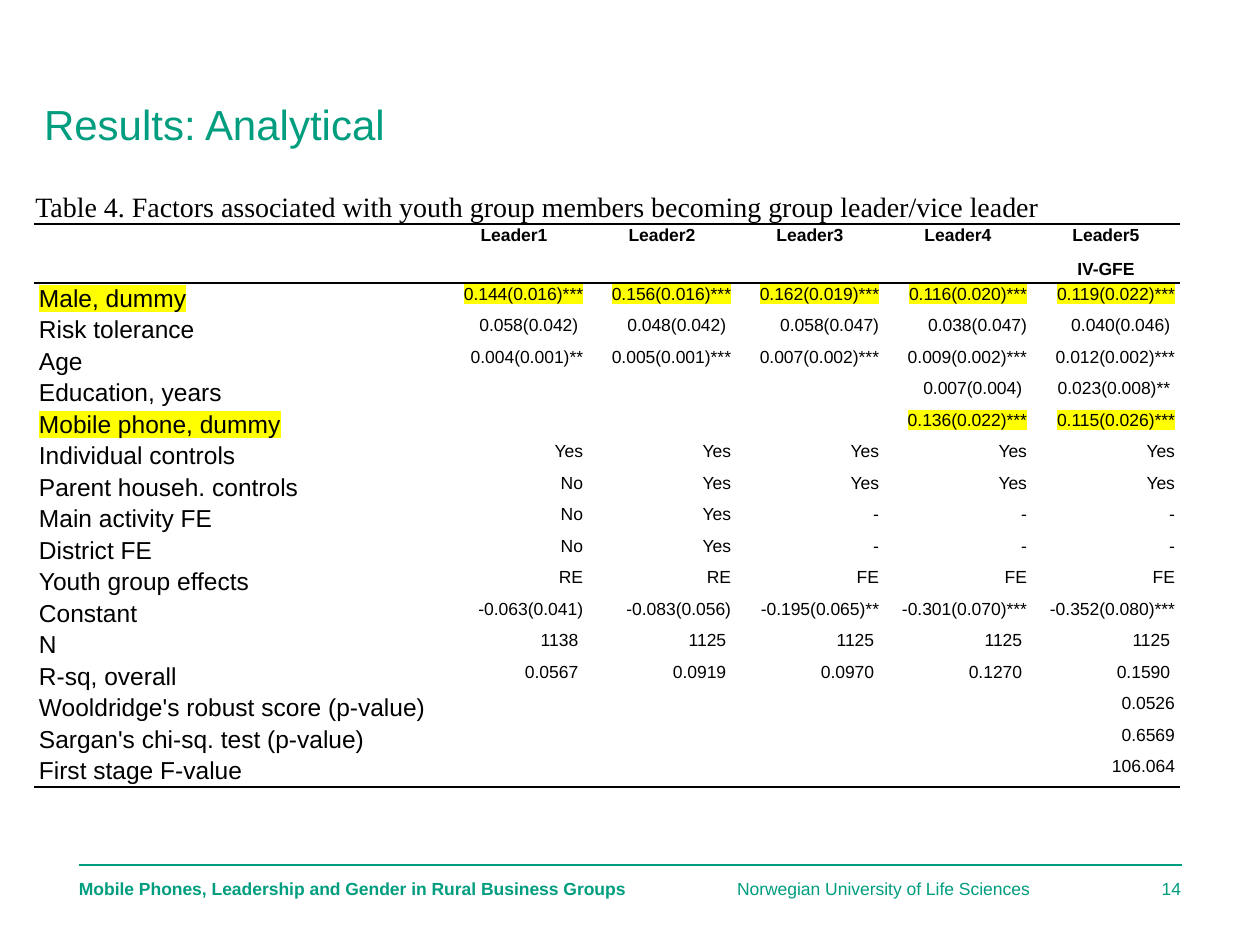
import pptx
import pptx.dml.color
import pptx.enum.shapes
import pptx.enum.text
import pptx.oxml
import pptx.oxml.ns
import pptx.util
import lxml.etree

ALIGN = pptx.enum.text.PP_ALIGN
ANCHOR = pptx.enum.text.MSO_ANCHOR
PX = 914400 // 126  # EMU in one pixel


class Theme:
    green = "009D7F"
    black = "000000"
    white = "FFFFFF"
    yellow = "FFFF00"
    sans = "Arial"
    serif = "Times New Roman"
    title = 24
    caption = 16
    label = 14
    small = 10
    rule = 1


def add_child(parent, tag, **attributes):
    child = lxml.etree.SubElement(parent, pptx.oxml.ns.qn(tag))
    for name, value in attributes.items():
        child.set(name, str(value))
    return child


def write(frame, text, size=Theme.small, color=Theme.black, font=Theme.sans, bold=False,
          align=ALIGN.LEFT, highlight=None, line_spacing=None, space_after=None):
    """Write each line of text as a paragraph of the frame."""
    for index, line in enumerate(text.split("\n")):
        para = frame.paragraphs[0] if index == 0 else frame.add_paragraph()
        para.alignment = align
        para.line_spacing = line_spacing
        if space_after:
            para.space_after = pptx.util.Pt(space_after)
        if not line:
            add_child(para._p, "a:endParaRPr", sz=size * 100)
            continue
        span = para.add_run()
        span.text = line
        span.font.size = pptx.util.Pt(size)
        span.font.bold = bold
        span.font.color.rgb = pptx.dml.color.RGBColor.from_string(color)
        if highlight:
            mark = add_child(span._r.get_or_add_rPr(), "a:highlight")
            add_child(mark, "a:srgbClr", val=highlight)
        span.font.name = font


deck = pptx.Presentation()
deck.slide_width = 1260 * PX
deck.slide_height = 945 * PX
page = deck.slides.add_slide(deck.slide_layouts[5])

# Footer rule
rule = page.shapes.add_connector(pptx.enum.shapes.MSO_CONNECTOR.STRAIGHT,
                                 79 * PX, 865 * PX, 1182 * PX, 865 * PX)
rule.line.color.rgb = pptx.dml.color.RGBColor.from_string(Theme.green)
rule.line.width = pptx.util.Pt(Theme.rule)
add_child(rule._element.spPr, "a:effectLst")

# Title
title = page.shapes.title
title.left, title.top, title.width, title.height = 44 * PX, 98 * PX, 940 * PX, 51 * PX
frame = title.text_frame
frame.margin_left = frame.margin_right = frame.margin_top = frame.margin_bottom = 0
frame.vertical_anchor = ANCHOR.BOTTOM
frame.auto_size = pptx.enum.text.MSO_AUTO_SIZE.SHAPE_TO_FIT_TEXT
write(frame, "Results: Analytical", size=Theme.title, color=Theme.green)

# Regression table
HEADER = ["", "Leader1", "Leader2", "Leader3", "Leader4", "Leader5\nIV-GFE"]
ROWS = [
    ["Male, dummy", "0.144(0.016)***", "0.156(0.016)***", "0.162(0.019)***",
     "0.116(0.020)***", "0.119(0.022)***"],
    ["Risk tolerance", "0.058(0.042) ", "0.048(0.042) ", "0.058(0.047)",
     "0.038(0.047)", "0.040(0.046) "],
    ["Age", "0.004(0.001)**", "0.005(0.001)***", "0.007(0.002)***",
     "0.009(0.002)***", "0.012(0.002)***"],
    ["Education, years", "", "", "", "0.007(0.004) ", "0.023(0.008)** "],
    ["Mobile phone, dummy", "", "", "", "0.136(0.022)***", "0.115(0.026)***"],
    ["Individual controls", "Yes", "Yes", "Yes", "Yes", "Yes"],
    ["Parent househ. controls", "No", "Yes", "Yes", "Yes", "Yes"],
    ["Main activity FE", "No", "Yes", "-", "-", "-"],
    ["District FE", "No", "Yes", "-", "-", "-"],
    ["Youth group effects", "RE", "RE", "FE", "FE", "FE"],
    ["Constant", "-0.063(0.041)", "-0.083(0.056)", "-0.195(0.065)**",
     "-0.301(0.070)***", "-0.352(0.080)***"],
    ["N", "1138 ", "1125 ", "1125 ", "1125 ", "1125 "],
    ["R-sq, overall", "0.0567 ", "0.0919 ", "0.0970 ", "0.1270 ", "0.1590 "],
    ["Wooldridge's robust score (p-value)", "", "", "", "", "0.0526"],
    ["Sargan's chi-sq. test (p-value)", "", "", "", "", "0.6569"],
    ["First stage F-value", "", "", "", "", "106.064"],
]
HIGHLIGHTED = {"Male, dummy", "Mobile phone, dummy"}
NO_STYLE = "{2D5ABB26-0587-4C30-8999-92F81FD0307C}"
header_height, body_height = 58 * PX, 478 * PX
label_width, value_width = 406 * PX, 148 * PX

grid = page.shapes.add_table(len(ROWS) + 1, len(HEADER), 34 * PX, 224 * PX,
                             label_width + 5 * value_width,
                             header_height + body_height).table
grid.first_row = grid.horz_banding = False
grid._tbl.tblPr.find(pptx.oxml.ns.qn("a:tableStyleId")).text = NO_STYLE
for index, column in enumerate(grid.columns):
    column.width = value_width if index else label_width
for index, row in enumerate(grid.rows):
    row.height = body_height // len(ROWS) if index else header_height

for row_index, values in enumerate([HEADER] + ROWS):
    if row_index == 0:
        edges = ["a:lnT", "a:lnB"]
    else:
        edges = ["a:lnB"] if row_index == len(ROWS) else []
    for column_index, value in enumerate(values):
        cell = grid.cell(row_index, column_index)
        cell.margin_left = cell.margin_right = 5 * PX
        cell.margin_top = cell.margin_bottom = 0
        is_label = column_index == 0 and row_index > 0
        if row_index == 0:
            align = ALIGN.CENTER
        else:
            align = ALIGN.LEFT if is_label else ALIGN.RIGHT
        write(cell.text_frame, value, size=Theme.label if is_label else Theme.small,
              bold=row_index == 0, align=align, line_spacing=1.07, space_after=8,
              highlight=Theme.yellow if values[0] in HIGHLIGHTED else None)
        # Borders come before the fill in the cell properties
        for edge in edges:
            line = add_child(cell._tc.get_or_add_tcPr(), edge, w=pptx.util.Pt(Theme.rule))
            add_child(add_child(line, "a:solidFill"), "a:srgbClr", val=Theme.black)
        cell.fill.solid()
        cell.fill.fore_color.rgb = pptx.dml.color.RGBColor.from_string(Theme.white)

# Footer texts
for text, left, width, bold, align in [
    ("Norwegian University of Life Sciences", 737, 398, False, ALIGN.LEFT),
    ("Mobile Phones, Leadership and Gender in Rural Business Groups", 79, 655, True, ALIGN.LEFT),
    ("14", 1139, 42, False, ALIGN.RIGHT),
]:
    frame = page.shapes.add_textbox(left * PX, 878 * PX, width * PX, 22 * PX).text_frame
    frame.margin_left = frame.margin_right = frame.margin_top = frame.margin_bottom = 0
    frame.word_wrap = True
    frame.vertical_anchor = ANCHOR.MIDDLE
    write(frame, text, color=Theme.green, bold=bold, align=align)

# Table caption
frame = page.shapes.add_textbox(23 * PX, 183 * PX, 1169 * PX, 47 * PX).text_frame
frame.word_wrap = True
write(frame, "Table 4. Factors associated with youth group members becoming group leader/vice leader",
      size=Theme.caption, font=Theme.serif, align=ALIGN.JUSTIFY)

deck.save("out.pptx")
